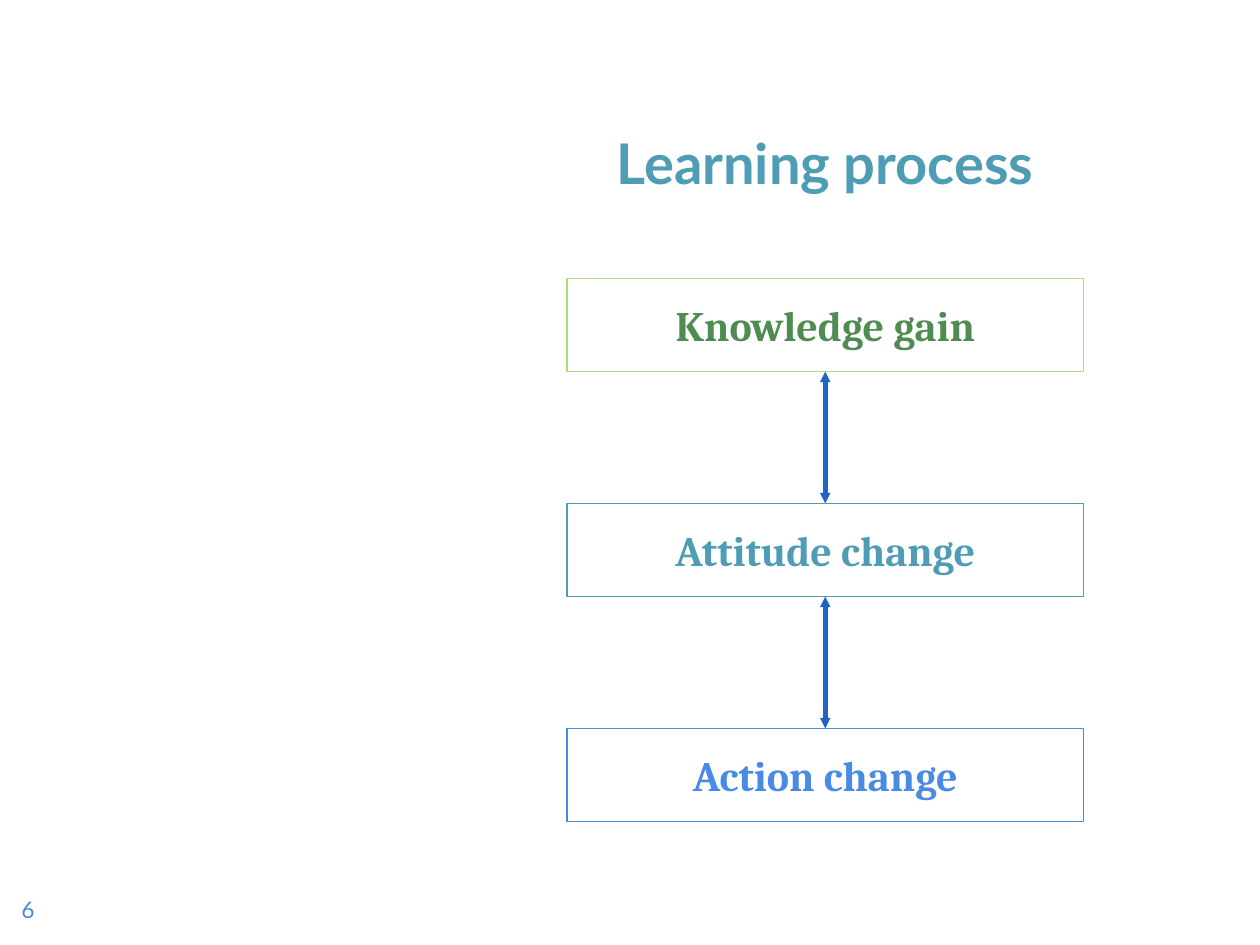
from lxml.etree import SubElement
from pptx import Presentation
from pptx.dml.color import RGBColor
from pptx.enum.shapes import MSO_CONNECTOR, MSO_SHAPE
from pptx.enum.text import MSO_ANCHOR, PP_ALIGN
from pptx.oxml.ns import qn
from pptx.util import Inches, Pt

HUES = {
    "teal": "4F9CB5",
    "green": "508B52",
    "lime": "ABDE75",
    "blue": "498BE4",
    "arrow": "1D64C5",
}
LEFT, WIDTH = 4.5, 4.1
TOP, HIGH, STEP = 2.21, 0.74, 1.785
STAGES = [
    ("Knowledge gain", "green", "lime"),
    ("Attitude change", "teal", "teal"),
    ("Action change", "blue", "blue"),
]


def color(name):
    return RGBColor.from_string(HUES[name])


def write(shape, text, face, size, hue, bold=True, align=PP_ALIGN.CENTER,
          anchor=MSO_ANCHOR.MIDDLE, inset=0):
    frame = shape.text_frame
    frame.text = text
    frame.word_wrap = True
    frame.vertical_anchor = anchor
    frame.margin_left = frame.margin_right = Inches(inset)
    frame.margin_top = frame.margin_bottom = Inches(inset)
    para = frame.paragraphs[0]
    para.alignment = align
    font = para.runs[0].font
    font.name, font.size, font.bold = face, Pt(size), bold
    font.color.rgb = color(hue)


def add_title(slide, text):
    title = slide.shapes.title
    title.left, title.top = Inches(LEFT), Inches(0.3)
    title.width, title.height = Inches(WIDTH), Inches(1.25)
    write(title, text, "Lato", 32, "teal", anchor=MSO_ANCHOR.BOTTOM)


def add_number(slide, text):
    box = slide.shapes.add_textbox(
        Inches(0.17), Inches(6.93), Inches(0.6), Inches(0.57))
    write(box, text, "Lato", 13, "blue", bold=False, align=PP_ALIGN.LEFT)


def add_stage(slide, top, text, hue, edge):
    box = slide.shapes.add_shape(
        MSO_SHAPE.RECTANGLE, Inches(LEFT), Inches(top),
        Inches(WIDTH), Inches(HIGH))
    box.shadow.inherit = False
    box.fill.background()
    box.line.color.rgb = color(edge)
    box.line.width = Pt(0.75)
    write(box, text, "Cambria", 24, hue, inset=0.1)
    return box


def add_arrow(slide, upper, lower):
    link = slide.shapes.add_connector(MSO_CONNECTOR.STRAIGHT, 0, 0, 0, 0)
    link.begin_connect(upper, 2)
    link.end_connect(lower, 0)
    link.line.color.rgb = color("arrow")
    link.line.width = Pt(3)
    props = link._element.spPr
    line = props.find(qn("a:ln"))
    for end in ("a:headEnd", "a:tailEnd"):
        SubElement(line, qn(end), type="triangle", w="sm", len="sm")
    SubElement(props, qn("a:effectLst"))


def main():
    deck = Presentation()
    deck.slide_width, deck.slide_height = Inches(10), Inches(7.5)
    slide = deck.slides.add_slide(deck.slide_layouts[5])
    add_title(slide, "Learning process")
    add_number(slide, "6")
    boxes = [add_stage(slide, TOP + i * STEP, *stage)
             for i, stage in enumerate(STAGES)]
    for upper, lower in zip(boxes, boxes[1:]):
        add_arrow(slide, upper, lower)
    deck.save("out.pptx")


if __name__ == "__main__":
    main()
